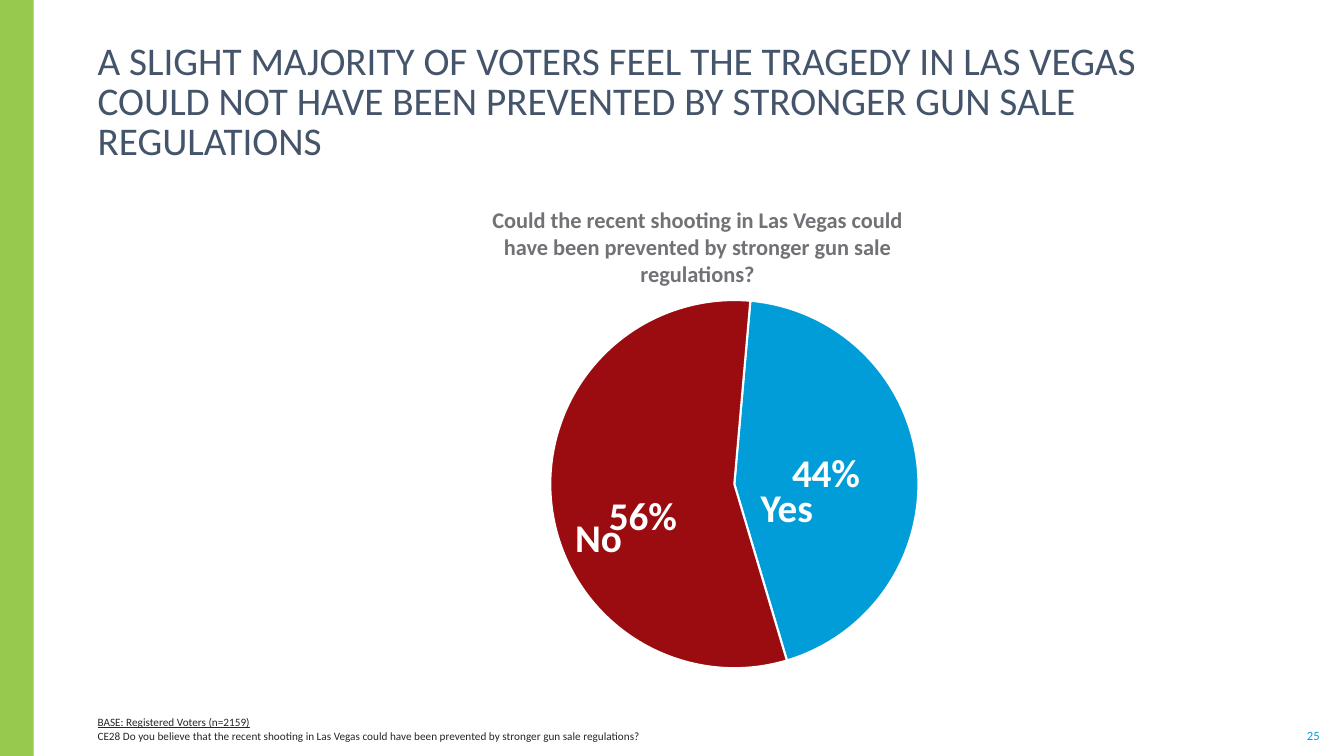
from dataclasses import dataclass

from lxml import etree
from pptx import Presentation
from pptx.chart.data import CategoryChartData
from pptx.dml.color import RGBColor
from pptx.enum import chart as ch, shapes, text
from pptx.oxml import ns
from pptx.util import Pt


@dataclass(frozen=True)
class Theme:
    font: str = "Calibri"
    band: str = "96C94D"
    title: str = "44546A"
    question: str = "707276"
    note: str = "262626"
    yes: str = "009DD9"
    no: str = "9B0C10"
    white: str = "FFFFFF"
    title_size: float = 28
    answer_size: float = 28
    question_size: float = 16
    page_size: float = 9
    note_size: float = 8


THEME = Theme()
WIDTH, HEIGHT = 960, 540
ANCHOR, ALIGN = text.MSO_ANCHOR, text.PP_ALIGN


def set_all(target, **values):
    for key, value in values.items():
        setattr(target, key, value)


def style_font(font, size, color, **extra):
    set_all(font, name=THEME.font, size=Pt(size), **extra)
    font.color.rgb = RGBColor.from_string(color)


def paint(fill, color):
    fill.solid()
    fill.fore_color.rgb = RGBColor.from_string(color)


def fill_frame(frame, lines, size, color, align=ALIGN.CENTER, anchor=ANCHOR.TOP,
               inset=(7.2, 3.6), **bold):
    """Write each line as a paragraph; inset is (left and right, top and bottom)."""
    across, down = map(Pt, inset)
    set_all(frame, word_wrap=True, auto_size=text.MSO_AUTO_SIZE.NONE,
            vertical_anchor=anchor, margin_left=across, margin_right=across,
            margin_top=down, margin_bottom=down)
    frame.text = "\n".join(lines)
    for paragraph in frame.paragraphs:
        paragraph.alignment = align
        style_font(paragraph.runs[0].font, size, color, **bold)


def add_text(slide, box, lines, size, color, **options):
    frame = slide.shapes.add_textbox(*map(Pt, box)).text_frame
    fill_frame(frame, lines, size, color, **options)
    return frame


def add_band(slide, box):
    band = slide.shapes.add_shape(shapes.MSO_SHAPE.RECTANGLE, *map(Pt, box))
    band.shadow.inherit = False
    paint(band.fill, THEME.band)
    band.line.fill.background()


def add_title(slide, box, wording):
    title = slide.shapes.title
    set_all(title, **dict(zip(("left", "top", "width", "height"), map(Pt, box))))
    fill_frame(title.text_frame, [wording], THEME.title_size, THEME.title,
               align=ALIGN.LEFT, anchor=ANCHOR.BOTTOM, inset=(7.2, 0))
    title.text_frame.paragraphs[0].line_spacing = 0.85


def manual_layout(**values):
    layout = etree.Element(ns.qn("c:layout"))
    manual = etree.SubElement(layout, ns.qn("c:manualLayout"))
    for tag, value in values.items():
        etree.SubElement(manual, ns.qn(f"c:{tag}"), val=str(value))
    return layout


def add_pie(slide, box, answers):
    """Draw the shares of the answers, given as name: (share, color)."""
    data = CategoryChartData(number_format="0%")
    data.categories = list(answers)
    data.add_series("Voters", [share for share, _ in answers.values()])
    pie = slide.shapes.add_chart(ch.XL_CHART_TYPE.PIE, *map(Pt, box), data).chart
    set_all(pie, has_title=False, has_legend=False)
    style_font(pie.font, 10, THEME.note)

    plot = pie.plots[0]
    plot.vary_by_categories = False
    series = plot.series[0]
    for index, (_, color) in enumerate(answers.values()):
        slice_format = series.points[index].format
        paint(slice_format.fill, color)
        paint(slice_format.line.fill, THEME.white)
        slice_format.line.width = Pt(1.5)

    labels = series.data_labels
    set_all(labels, show_value=True, number_format="0%",
            number_format_is_linked=False, position=ch.XL_LABEL_POSITION.CENTER)
    style_font(labels.font, THEME.answer_size, THEME.white, bold=True)
    lowered = series.points[1].data_label
    style_font(lowered.font, THEME.answer_size, THEME.white, bold=True)
    lowered.position = ch.XL_LABEL_POSITION.CENTER
    index_tag = series._element.xpath("c:dLbls/c:dLbl/c:idx")[0]
    number_format = etree.Element(ns.qn("c:numFmt"), formatCode="0%", sourceLinked="0")
    index_tag.addnext(number_format)
    index_tag.addnext(manual_layout(x=0, y=0.06))

    area = plot._element.getparent()
    for old in area.findall(ns.qn("c:layout")):
        area.remove(old)
    area.insert(0, manual_layout(layoutTarget="inner", xMode="edge", yMode="edge",
                                 x=0.24, y=0.04, w=0.65, h=0.93))
    rotation = plot._element.find(ns.qn("c:firstSliceAng"))
    if rotation is None:
        rotation = etree.SubElement(plot._element, ns.qn("c:firstSliceAng"))
    rotation.set("val", "5")


def add_poll(slide, box):
    """Place the question, the pie and the names of the answers."""
    left, top, width, height = box
    add_pie(slide, (left, top + 59, width, height - 59),
            {"Yes": (0.44, THEME.yes), "No": (0.56, THEME.no)})
    add_text(slide, (left + 39.5, top, 325.5, 65.5),
             ["Could the recent shooting in Las Vegas could have been prevented "
              "by stronger gun sale regulations?"],
             THEME.question_size, THEME.question, bold=True)
    for name, across, down, span in (("No", 65.5, 219, 132), ("Yes", 195, 198, 142)):
        add_text(slide, (left + across, top + down, span, 41), [name],
                 THEME.answer_size, THEME.white, bold=True)


def add_footer(slide, box):
    left, top, width, height = box
    note = add_text(slide, box, [
        "BASE: Registered Voters (n=2159)",
        "CE28 Do you believe that the recent shooting in Las Vegas could have been "
        "prevented by stronger gun sale regulations?"],
        THEME.note_size, THEME.note, align=ALIGN.LEFT, anchor=ANCHOR.BOTTOM,
        inset=(7.2, 0))
    note.paragraphs[0].runs[0].font.underline = True
    note.paragraphs[1].space_before = Pt(0.6)
    add_text(slide, (left + width + 8, top + 18, 20, 11), ["25"], THEME.page_size,
             THEME.yes, anchor=ANCHOR.MIDDLE, inset=(0, 0))


def main():
    deck = Presentation()
    set_all(deck, slide_width=Pt(WIDTH), slide_height=Pt(HEIGHT))
    slide = deck.slides.add_slide(deck.slide_layouts[5])
    add_band(slide, (0, 0, 24, HEIGHT))
    add_title(slide, (62.6, 72, 813.6, 44.6),
              "A SLIGHT MAJORITY OF VOTERS FEEL THE TRAGEDY IN LAS VEGAS COULD NOT "
              "HAVE BEEN PREVENTED BY STRONGER GUN SALE REGULATIONS")
    add_poll(slide, (296, 144, 404.6, 342))
    add_footer(slide, (62.6, 502, 857.5, 28.8))
    deck.save("out.pptx")


if __name__ == "__main__":
    main()
